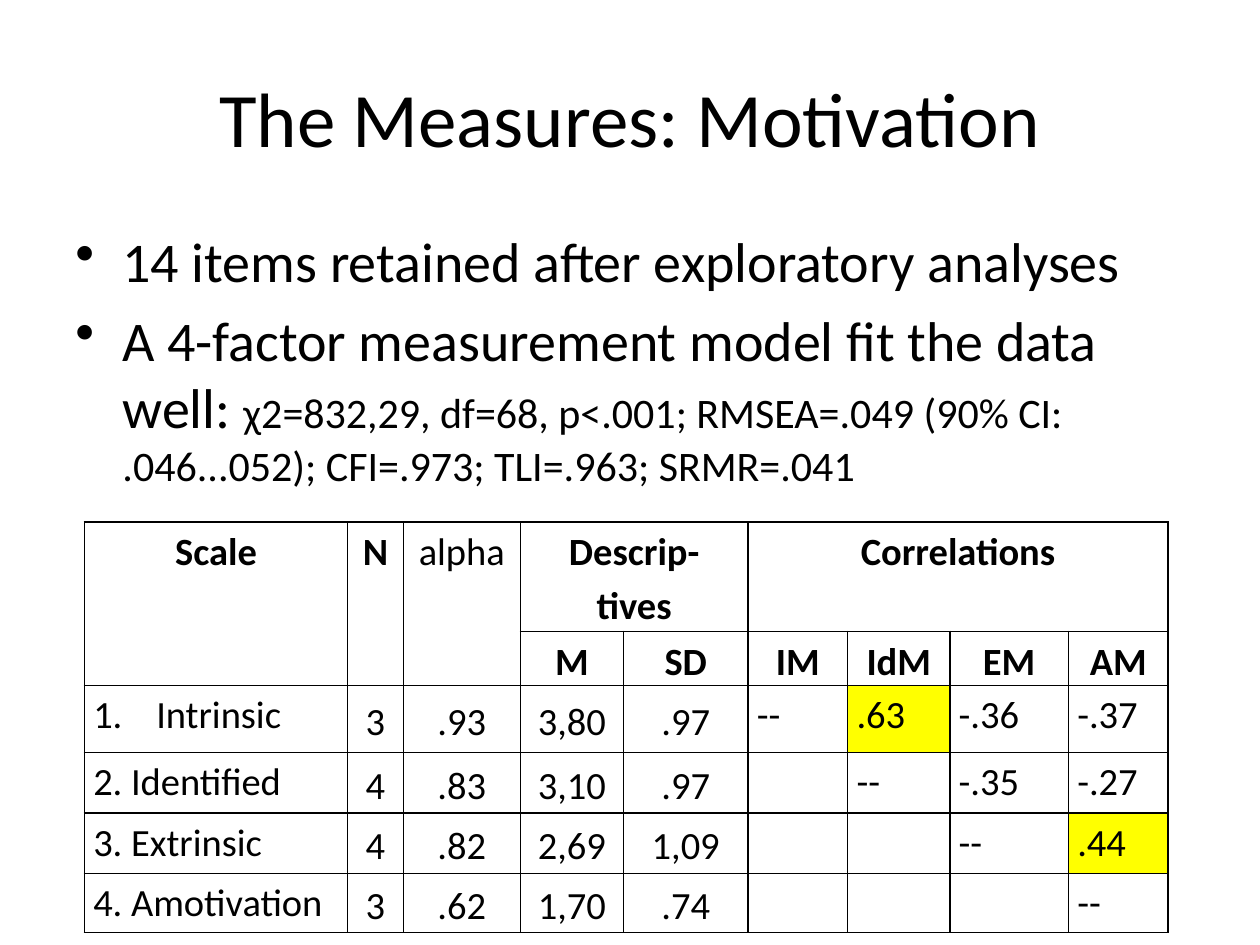
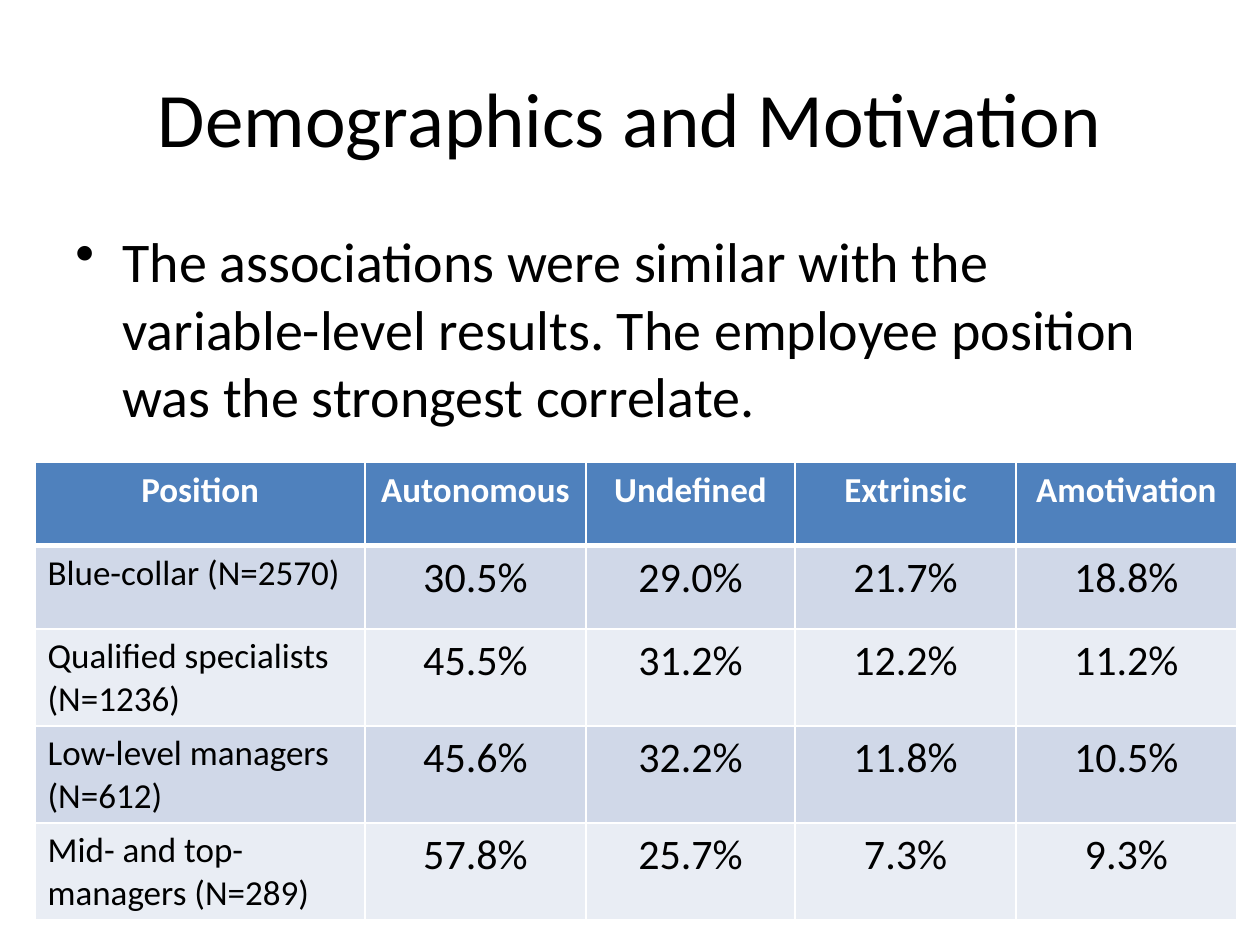
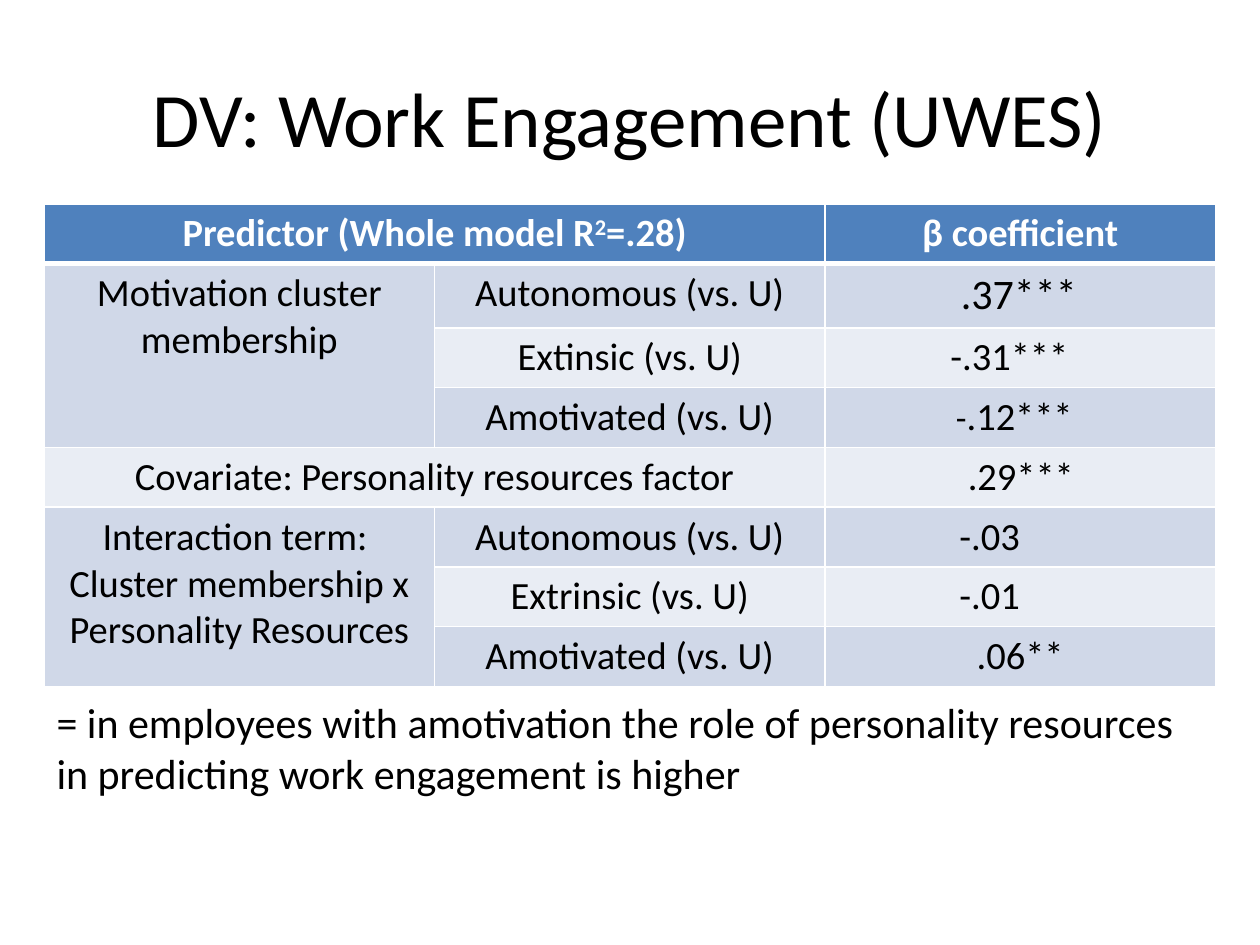
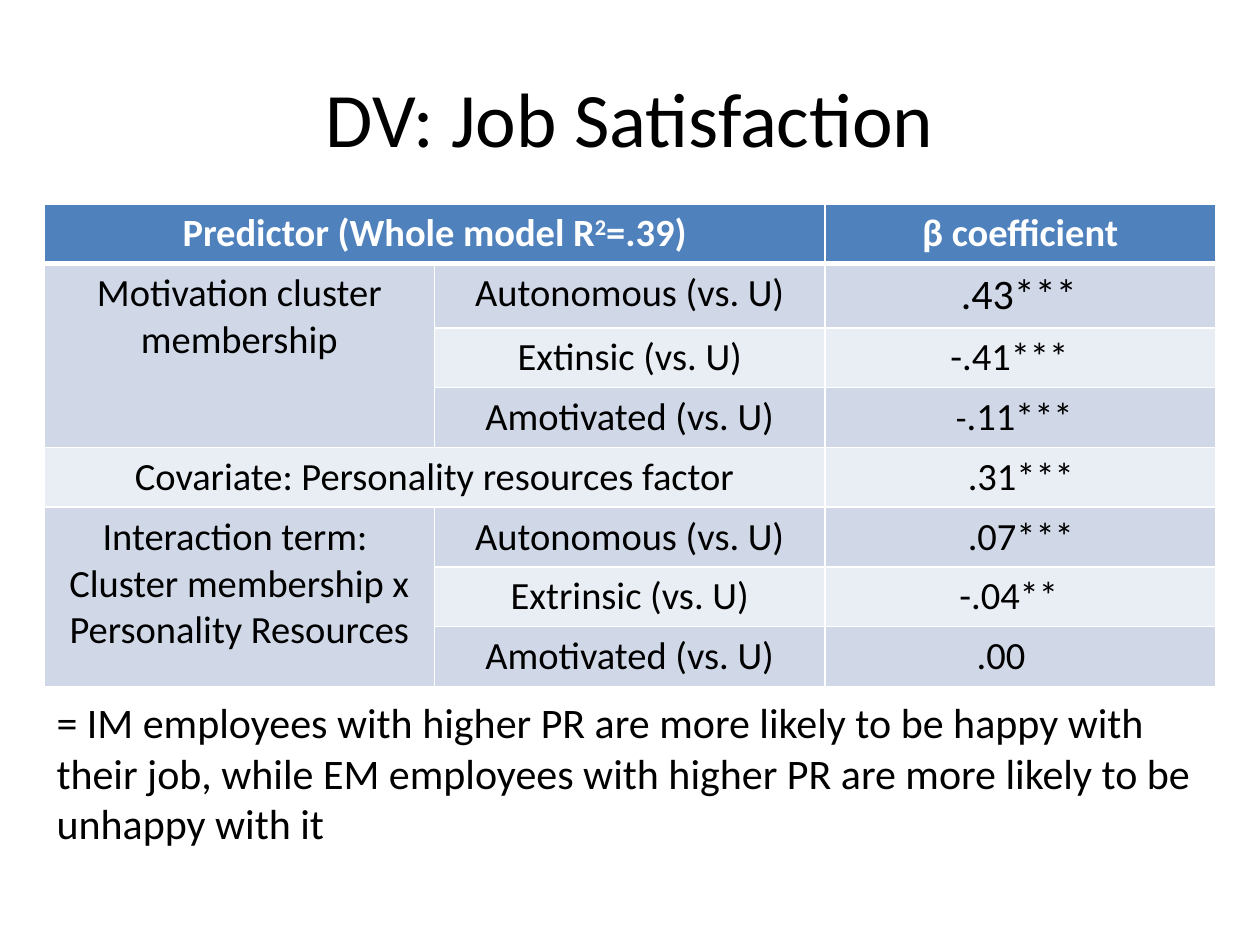
from dataclasses import dataclass
from itertools import product

from lxml import etree
from pptx import Presentation
from pptx.dml.color import RGBColor
from pptx.enum import text as t
from pptx.oxml import ns
from pptx.util import Cm, Pt

# Shared look
FONT = "Calibri"
BLACK, WHITE, YELLOW = "000000", "FFFFFF", "FFFF00"
HEADER, BANDS = "4F81BD", ("D0D8E8", "E9EDF4")
LEFT, CENTER = t.PP_ALIGN.LEFT, t.PP_ALIGN.CENTER
TOP, MIDDLE = t.MSO_ANCHOR.TOP, t.MSO_ANCHOR.MIDDLE
TITLE_AREA = (1.27, 0.76, 22.86, 3.18)
BULLET_INDENT = 0.95
NUMBER_INDENT = 1.27


@dataclass
class Span:
    text: str
    size: float
    raised: bool = False


@dataclass
class Entry:
    spans: list[Span]
    bold: bool = False
    color: str = BLACK
    fill: str | None = None
    align: t.PP_ALIGN = CENTER
    anchor: t.MSO_ANCHOR = TOP
    indent: float = 0
    numbered: bool = False
    line_spacing: float = 1.0


@dataclass
class Grid:
    left: float
    top: float
    columns: list[float]
    rows: list[float]
    entries: dict[tuple[int, int], Entry]
    merges: list[tuple[int, int, int, int]]
    border: str
    side_margin: float = 0.25
    edge_margin: float = 0.13
    header_rule: float = 1


def rgb(code: str) -> RGBColor:
    return RGBColor.from_string(code)


# Text
def write(paragraph, spans: list[Span], color: str = BLACK, bold: bool = False) -> None:
    for index, span in enumerate(spans):
        if index == 0:
            paragraph.text = span.text
            runs = paragraph.runs
        else:
            runs = [paragraph.add_run()]
            runs[0].text = span.text
        for run in runs:
            run.font.name, run.font.size, run.font.bold = FONT, Pt(span.size), bold
            run.font.color.rgb = rgb(color)
            if span.raised:
                run.font._element.set("baseline", "30000")


def indent(paragraph, left: float, hanging: float = 0, mark: str = "", value: str = "") -> None:
    properties = paragraph._p.get_or_add_pPr()
    properties.set("marL", str(Cm(left)))
    properties.set("indent", str(-Cm(hanging)))
    if mark:
        attribute = "char" if mark == "buChar" else "type"
        etree.SubElement(properties, ns.qn(f"a:{mark}")).set(attribute, value)


def add_page(deck, title: str):
    page = deck.slides.add_slide(deck.slide_layouts[5])
    box = page.shapes.title
    box.left, box.top, box.width, box.height = map(Cm, TITLE_AREA)
    box.text_frame.vertical_anchor = MIDDLE
    paragraph = box.text_frame.paragraphs[0]
    paragraph.alignment = CENTER
    write(paragraph, [Span(title, 44)])
    return page


def add_text(page, area: tuple[float, ...], paragraphs: list[list[Span]], bulleted: bool) -> None:
    frame = page.shapes.add_textbox(*map(Cm, area)).text_frame
    frame.word_wrap = True
    for index, spans in enumerate(paragraphs):
        paragraph = frame.add_paragraph() if index else frame.paragraphs[0]
        write(paragraph, spans)
        if bulleted:
            paragraph.space_before = Pt(6.4)
            indent(paragraph, BULLET_INDENT, BULLET_INDENT, "buChar", "•")


# Tables
def set_borders(cell, color: str, widths: dict[str, float]) -> None:
    properties = cell._tc.get_or_add_tcPr()
    for position, side in enumerate(("L", "R", "T", "B")):
        line = etree.Element(ns.qn(f"a:ln{side}"), w=str(Pt(widths.get(side, 1))))
        fill = etree.SubElement(line, ns.qn("a:solidFill"))
        etree.SubElement(fill, ns.qn("a:srgbClr"), val=color)
        properties.insert(position, line)


def fill_cell(cell, entry: Entry) -> None:
    cell.vertical_anchor = entry.anchor
    if entry.fill:
        cell.fill.solid()
        cell.fill.fore_color.rgb = rgb(entry.fill)
    else:
        cell.fill.background()
    if not entry.spans:
        return
    paragraph = cell.text_frame.paragraphs[0]
    write(paragraph, entry.spans, entry.color, entry.bold)
    paragraph.alignment = entry.align
    if entry.line_spacing != 1:
        paragraph.line_spacing = entry.line_spacing
    if entry.numbered:
        indent(paragraph, NUMBER_INDENT, NUMBER_INDENT, "buAutoNum", "arabicPeriod")
    elif entry.indent:
        indent(paragraph, entry.indent)


def add_grid(page, grid: Grid) -> None:
    row_count, column_count = len(grid.rows), len(grid.columns)
    table = page.shapes.add_table(
        row_count, column_count, Cm(grid.left), Cm(grid.top),
        Cm(sum(grid.columns)), Cm(sum(grid.rows))).table
    table.first_row = table.horz_banding = False
    for column, width in zip(table.columns, grid.columns):
        column.width = Cm(width)
    for row, height in zip(table.rows, grid.rows):
        row.height = Cm(height)
    for row, column in product(range(row_count), range(column_count)):
        cell = table.cell(row, column)
        cell.margin_left = cell.margin_right = Cm(grid.side_margin)
        cell.margin_top = cell.margin_bottom = Cm(grid.edge_margin)
        fill_cell(cell, grid.entries.get((row, column), Entry([], fill=band(row, grid))))
        rule = {0: {"B": grid.header_rule}, 1: {"T": grid.header_rule}}.get(row, {})
        set_borders(cell, grid.border, rule)
    for top, left, bottom, right in grid.merges:
        table.cell(top, left).merge(table.cell(bottom, right))


def band(row: int, grid: Grid | None = None) -> str | None:
    if grid and grid.border != WHITE:
        return None
    return BANDS[(row - 1) % 2] if row else HEADER


def header(*spans: Span) -> Entry:
    return Entry(list(spans), bold=True, color=WHITE, fill=HEADER)


# Motivation scales
def scale_grid() -> Grid:
    texts = [
        ["Scale", "N", "alpha", "Descrip-\ntives", "", "Correlations", "", "", ""],
        ["", "", "", "M", "SD", "IM", "IdM", "EM", "AM"],
        ["Intrinsic", "3", ".93", "3,80", ".97", "--", ".63", "-.36", "-.37"],
        ["2. Identified", "4", ".83", "3,10", ".97", "", "--", "-.35", "-.27"],
        ["3. Extrinsic", "4", ".82", "2,69", "1,09", "", "", "--", ".44"],
        ["4. Amotivation", "3", ".62", "1,70", ".74", "", "", "", "--"],
    ]
    highlighted = (".63", ".44")
    entries = {}
    for row, line in enumerate(texts):
        for column, text in enumerate(line):
            if not text:
                continue
            heading, statistic = row < 2, 1 <= column <= 4
            entries[row, column] = Entry(
                [Span(text, 22)],
                bold=heading and text != "alpha",
                fill=YELLOW if text in highlighted else None,
                align=CENTER if heading or statistic else LEFT,
                anchor=MIDDLE if statistic and not heading else TOP,
                numbered=text == "Intrinsic",
                line_spacing=1.15)
    return Grid(
        1.7, 10.52,
        [5.31, 1.12, 2.36, 2.08, 2.51, 2.01, 2.06, 2.39, 2.01],
        [2.21, 0.99, 1.35, 1.22, 1.22, 1.19],
        entries,
        [(0, 0, 1, 0), (0, 1, 1, 1), (0, 2, 1, 2), (0, 3, 0, 4), (0, 5, 0, 8)],
        BLACK, side_margin=0.18, edge_margin=0)


# Cluster shares by position
def position_grid() -> Grid:
    headings = ["Position", "Autonomous", "Undefined", "Extrinsic", "Amotivation"]
    shares = [
        ("Blue-collar (N=2570)", 30.5, 29.0, 21.7, 18.8),
        ("Qualified specialists (N=1236)", 45.5, 31.2, 12.2, 11.2),
        ("Low-level managers (N=612)", 45.6, 32.2, 11.8, 10.5),
        ("Mid- and top-managers (N=289)", 57.8, 25.7, 7.3, 9.3),
    ]
    entries = {(0, column): header(Span(text, 20)) for column, text in enumerate(headings)}
    for row, (position, *values) in enumerate(shares, 1):
        entries[row, 0] = Entry([Span(position, 20)], fill=band(row), align=LEFT)
        for column, value in enumerate(values, 1):
            entries[row, column] = Entry([Span(f"{value:.1f}%", 24)], fill=band(row))
    return Grid(0.71, 9.32, [6.65, 4.45, 4.22, 4.45, 4.45], [1.68] * 5,
                entries, [], WHITE, header_rule=3)


# Regression results
@dataclass
class Coefficient:
    text: str
    indent: float
    size: float = 22


def regression_grid(r_squared: str, coefficients: list[Coefficient]) -> Grid:
    labels = {
        (1, 0): "Motivation cluster membership",
        (1, 1): "Autonomous (vs. U)",
        (2, 1): "Extinsic (vs. U)",
        (3, 1): "Amotivated (vs. U)",
        (4, 0): "Covariate: Personality resources factor",
        (5, 0): "Interaction term: \nCluster membership x\nPersonality Resources",
        (5, 1): "Autonomous (vs. U)",
        (6, 1): "Extrinsic (vs. U)",
        (7, 1): "Amotivated (vs. U)",
    }
    entries = {place: Entry([Span(text, 22)], fill=band(place[0]))
               for place, text in labels.items()}
    entries[0, 0] = header(Span("Predictor (Whole model R", 22),
                           Span("2", 22, raised=True), Span(f"={r_squared})", 22))
    entries[0, 2] = header(Span("β coefficient", 22))
    for row, item in enumerate(coefficients, 1):
        spans = [Span(item.text, item.size)]
        if row == 3:  # smaller minus sign
            spans = [Span(item.text[0], 20), Span(item.text[1:], 22)]
        entries[row, 2] = Entry(spans, fill=band(row), align=LEFT, indent=item.indent)
    return Grid(0.89, 4.11, [7.87] * 3, [1.04] * 8, entries,
                [(0, 0, 0, 1), (1, 0, 3, 0), (4, 0, 4, 1), (5, 0, 7, 0)],
                WHITE, header_rule=3)


def add_regression_page(deck, title: str, r_squared: str, coefficients: list[Coefficient],
                        conclusion: str, height: float) -> None:
    page = add_page(deck, title)
    add_grid(page, regression_grid(r_squared, coefficients))
    add_text(page, (0.89, 13.92, 23.6, height), [[Span(conclusion, 24)]], bulleted=False)


def main() -> None:
    deck = Presentation()
    deck.slide_width, deck.slide_height = Cm(25.4), Cm(19.05)

    page = add_page(deck, "The Measures: Motivation")
    add_grid(page, scale_grid())
    add_text(page, (1.27, 4.45, 22.86, 13.87), [
        [Span("14 items retained after exploratory analyses", 32)],
        [Span("A 4-factor measurement model fit the data well: ", 32),
         Span("χ2=832,29, df=68, p<.001; RMSEA=.049 (90% CI: .046...052); "
              "CFI=.973; TLI=.963; SRMR=.041", 24)],
    ], bulleted=True)

    page = add_page(deck, "Demographics and Motivation")
    add_text(page, (1.27, 4.45, 22.86, 12.57), [
        [Span("The associations were similar with the variable-level results. "
              "The employee position was the strongest correlate.", 32)],
    ], bulleted=True)
    add_grid(page, position_grid())

    add_regression_page(
        deck, "DV: Work Engagement (UWES)", ".28",
        [Coefficient(".37***", 2.49, 24), Coefficient("-.31***", 2.28),
         Coefficient("-.12***", 2.39), Coefficient(".29***", 2.63),
         Coefficient("-.03", 2.46), Coefficient("-.01", 2.46), Coefficient(".06**", 2.81)],
        "= in employees with amotivation the role of personality resources "
        "in predicting work engagement is higher", 2.31)
    add_regression_page(
        deck, "DV: Job Satisfaction", ".39",
        [Coefficient(".43***", 2.49, 24), Coefficient("-.41***", 2.28),
         Coefficient("-.11***", 2.39), Coefficient(".31***", 2.63),
         Coefficient(".07***", 2.63), Coefficient("-.04**", 2.46), Coefficient(".00", 2.81)],
        "= IM employees with higher PR are more likely to be happy with their job, "
        "while EM employees with higher PR are more likely to be unhappy with it", 3.33)

    deck.save("out.pptx")


if __name__ == "__main__":
    main()
